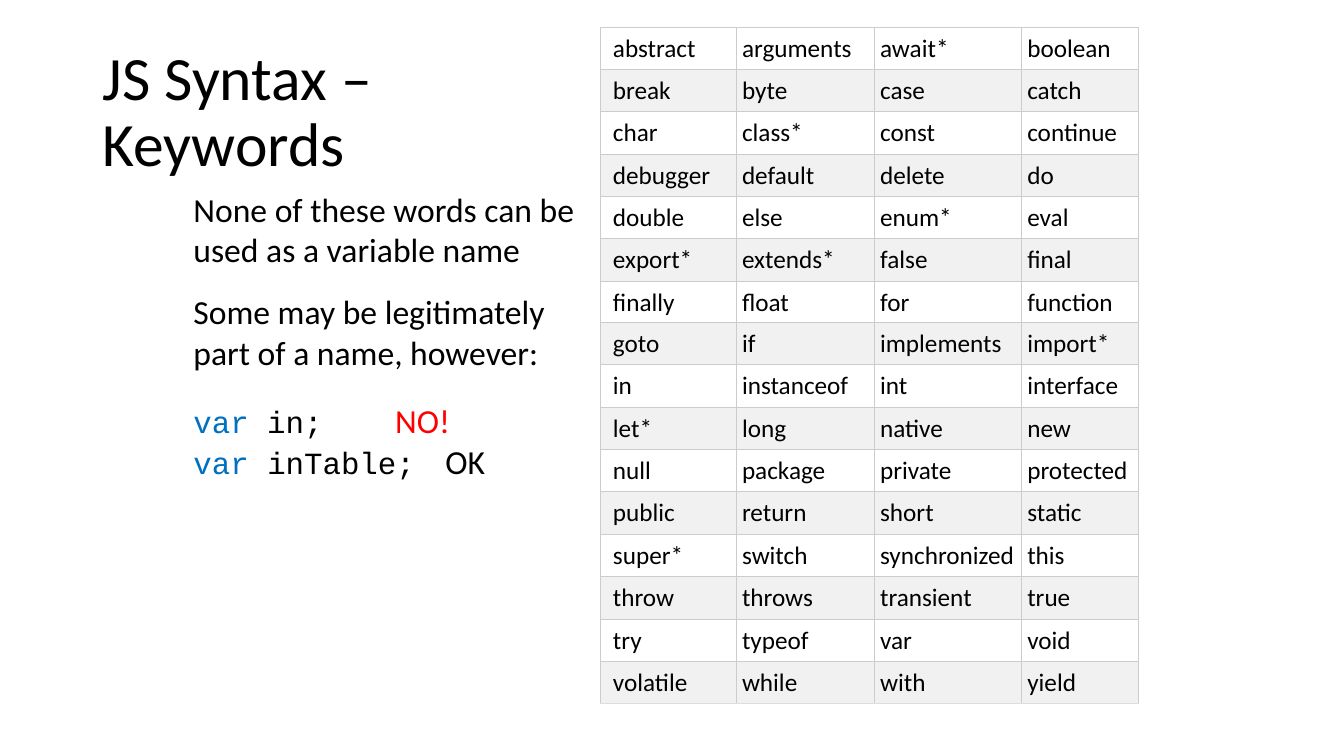
from lxml.etree import SubElement
from pptx import Presentation
from pptx.dml.color import RGBColor
from pptx.enum.text import MSO_ANCHOR, MSO_AUTO_SIZE as AUTO_SIZE
from pptx.oxml.ns import qn
from pptx.util import Inches, Pt

BLACK = RGBColor(0x00, 0x00, 0x00)
WHITE = RGBColor(0xFF, 0xFF, 0xFF)
BAND = RGBColor(0xF1, 0xF1, 0xF1)
GRID = RGBColor(0xCC, 0xCC, 0xCC)
GRID_END = RGBColor(0xDD, 0xDD, 0xDD)
BLUE = RGBColor(0x00, 0x70, 0xC0)
RED = RGBColor(0xFF, 0x00, 0x00)

BODY, CODE = "Calibri", "Courier New"
COL_WIDTHS = (1.34, 1.37, 1.46, 1.16)
ROW_HEIGHT = 0.42
TAB_STEP = 0.5

KEYWORDS_TOP = """
abstract arguments await* boolean
break byte case catch
char class* const continue
debugger default delete do
double else enum* eval
export* extends* false final
finally float for function
"""
KEYWORDS_BOTTOM = """
goto if implements import*
in instanceof int interface
let* long native new
null package private protected
public return short static
super* switch synchronized this
throw throws transient true
try typeof var void
volatile while with yield
"""


class KeywordSlide:
    def __init__(self, prs):
        self.slide = prs.slides.add_slide(prs.slide_layouts[6])

    def run(self, p, text, size, color=BLACK, font=BODY):
        r = p.add_run()
        r.text = text
        r.font.size = Pt(size)
        r.font.name = font
        r.font.color.rgb = color

    def box(self, left, top, width, height):
        sp = self.slide.shapes.add_textbox(
            Inches(left), Inches(top), Inches(width), Inches(height))
        return sp.text_frame

    def title(self, first, second):
        tf = self.box(0.92, 0.4, 11.5, 1.45)
        tf.word_wrap = True
        tf.vertical_anchor = MSO_ANCHOR.MIDDLE
        p = tf.paragraphs[0]
        p.line_spacing = 0.9
        self.run(p, first, 44)
        p.add_line_break()
        self.run(p, second, 44)

    def note(self, top, width, lines):
        """Each line is a list of (text, size, color, font) runs."""
        tf = self.box(1.82, top, width, 0.91)
        tf.word_wrap = False
        tf.auto_size = AUTO_SIZE.SHAPE_TO_FIT_TEXT
        for i, line in enumerate(lines):
            p = tf.add_paragraph() if i else tf.paragraphs[0]
            if any("\t" in part[0] for part in line):
                self.tabs(p)
            for part in line:
                self.run(p, *part)

    def tabs(self, p):
        tab_list = SubElement(p._p.get_or_add_pPr(), qn("a:tabLst"))
        for n in range(1, 7):
            SubElement(tab_list, qn("a:tab"), pos=str(Inches(n * TAB_STEP)), algn="l")

    def border(self, cell, side, color):
        ln = SubElement(cell._tc.get_or_add_tcPr(), qn("a:ln" + side), w=str(Pt(0.75)))
        fill = SubElement(ln, qn("a:solidFill"))
        SubElement(fill, qn("a:srgbClr"), val=str(color))

    def table(self, top, keywords, fills):
        rows = [line.split() for line in keywords.strip().splitlines()]
        frame = self.slide.shapes.add_table(
            len(rows), len(COL_WIDTHS), Inches(5.96), Inches(top),
            Inches(sum(COL_WIDTHS)), Inches(ROW_HEIGHT * len(rows)))
        table = frame.table
        table.first_row = table.horz_banding = False
        for column, width in zip(table.columns, COL_WIDTHS):
            column.width = Inches(width)
        for i, words in enumerate(rows):
            table.rows[i].height = Inches(ROW_HEIGHT)
            for j, word in enumerate(words):
                cell = table.cell(i, j)
                cell.margin_left = Inches(0.06 if j else 0.12)
                cell.margin_right = cell.margin_top = cell.margin_bottom = Inches(0.06)
                for side in "LRTB":
                    last = side == "B" and i == len(rows) - 1
                    self.border(cell, side, GRID_END if last else GRID)
                cell.fill.solid()
                cell.fill.fore_color.rgb = fills[i % 2]
                self.run(cell.text_frame.paragraphs[0], word, 18)


def main():
    prs = Presentation()
    prs.slide_width, prs.slide_height = Inches(13.33), Inches(7.5)
    s = KeywordSlide(prs)

    # Title
    s.title("JS Syntax – ", "Keywords")

    # Keyword tables, banding carried on from one to the next
    s.table(0.27, KEYWORDS_TOP, (WHITE, BAND))
    s.table(3.2, KEYWORDS_BOTTOM, (BAND, WHITE))

    # Explanations
    s.note(1.82, 4.09, [[("None of these words can be", 24)],
                        [("used as a variable name", 24)]])
    s.note(2.84, 3.79, [[("Some may be legitimately", 24)],
                        [("part of a name, however:", 24)]])

    # Code example
    s.note(3.92, 3.12, [
        [("var", 22, BLUE, CODE), (" in;", 22, BLACK, CODE),
         ("\t\t", 24), ("NO!", 24, RED)],
        [("var ", 22, BLUE, CODE), ("inTable;", 22, BLACK, CODE),
         ("\tOK", 24)],
    ])

    prs.save("out.pptx")


if __name__ == "__main__":
    main()
